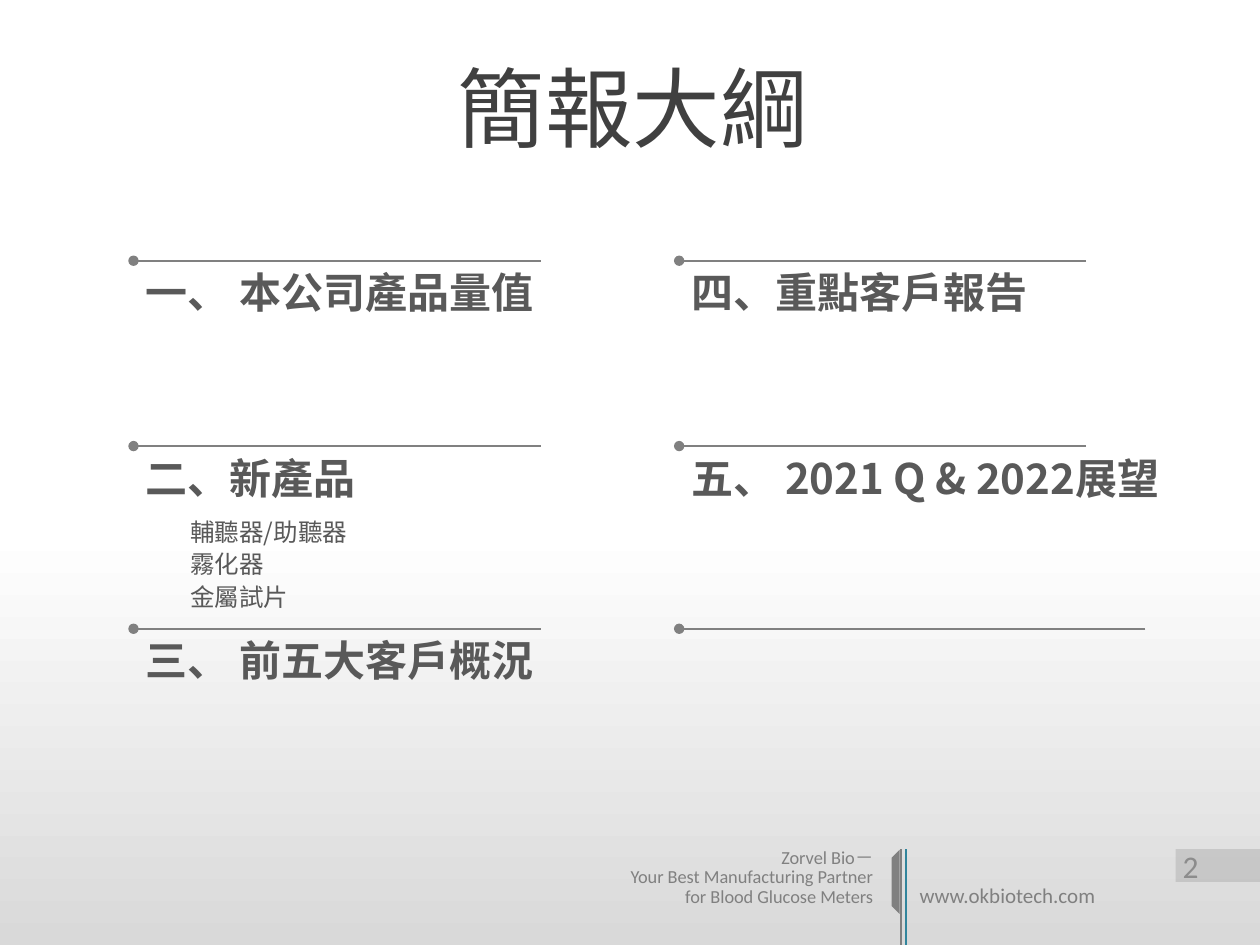
from copy import deepcopy

from lxml import etree
from pptx import Presentation
from pptx.dml.color import RGBColor
from pptx.enum import shapes, text
from pptx.oxml.ns import qn
from pptx.util import Pt

CJK, LATIN = "Noto Sans CJK SC", "Calibri"
GRAY, DARK = "808080", "595959"


def rgb(value):
    return RGBColor.from_string(value)


def write(tf, lines, size, color, font=CJK, bold=False, align=None, leading=None, gap=0):
    """Fill a text frame with one paragraph per line."""
    for i, line in enumerate(lines):
        p = tf.paragraphs[0] if i == 0 else tf.add_paragraph()
        p.alignment = align
        if leading:
            p.line_spacing = Pt(leading)
        if i and gap:
            p.space_before = Pt(gap)
        r = p.add_run()
        r.text = line
        r.font.size, r.font.bold, r.font.name = Pt(size), bold, font
        r.font.color.rgb = rgb(color)
        etree.SubElement(r.font._element, qn("a:ea"), typeface=font)


class Deck:
    def __init__(self, width, height):
        self.prs = Presentation()
        self.prs.slide_width, self.prs.slide_height = Pt(width), Pt(height)
        self.s = self.prs.slides.add_slide(self.prs.slide_layouts[6])

    def background(self, stops):
        """Paint a top-to-bottom gradient from (position, colour) pairs."""
        fill = self.s.background.fill
        fill.gradient()
        fill.gradient_angle = 270
        gs_list = self.s._element.find(".//" + qn("a:gsLst"))
        while len(gs_list) < len(stops):
            gs_list.append(deepcopy(gs_list[0]))
        for stop, (position, color) in zip(fill.gradient_stops, stops):
            stop.position = position
            stop.color.rgb = rgb(color)

    def text(self, x, y, w, h, lines, size, color, inset=True, grow=True, middle=False, **style):
        tf = self.s.shapes.add_textbox(Pt(x), Pt(y), Pt(w), Pt(h)).text_frame
        tf.word_wrap = True
        if grow:
            tf.auto_size = text.MSO_AUTO_SIZE.SHAPE_TO_FIT_TEXT
        if middle:
            tf.vertical_anchor = text.MSO_ANCHOR.MIDDLE
        if not inset:
            tf.margin_left = tf.margin_right = tf.margin_top = tf.margin_bottom = 0
        write(tf, lines, size, color, **style)

    def line(self, x1, y1, x2, y2, color=GRAY, width=1, dot=False):
        """Draw a straight line, with a dot at its end if asked."""
        c = self.s.shapes.add_connector(
            shapes.MSO_CONNECTOR.STRAIGHT, Pt(x1), Pt(y1), Pt(x2), Pt(y2))
        c.line.color.rgb = rgb(color)
        c.line.width = Pt(width)
        if dot:
            etree.SubElement(c.line._get_or_add_ln(), qn("a:tailEnd"), type="oval")
        etree.SubElement(c._element.spPr, qn("a:effectLst"))

    def shape(self, kind, x, y, w, h, color, alpha=None):
        sp = self.s.shapes.add_shape(kind, Pt(x), Pt(y), Pt(w), Pt(h))
        sp.shadow.inherit = False
        sp.fill.solid()
        sp.fill.fore_color.rgb = rgb(color)
        sp.line.fill.background()
        if alpha:
            clr = sp._element.spPr.find(".//" + qn("a:srgbClr"))
            etree.SubElement(clr, qn("a:alpha"), val=str(alpha * 1000))
        return sp


def footer(deck):
    deck.line(514.8, 485.3, 514.8, 540, width=1.5)
    stripe = deck.shape(shapes.MSO_SHAPE.DIAGONAL_STRIPE, 501.1, 491, 25.9, 25.9, GRAY)
    stripe.adjustments[0] = 0.75
    stripe.rotation = 225
    stripe._element.spPr.xfrm.set("flipH", "1")
    deck.line(517.7, 485.3, 517.7, 540, "31859C", 1.5)
    deck.text(342.7, 481.7, 163.4, 40.3,
              ["Zorvel Bio－", "Your Best Manufacturing Partner", "for Blood Glucose Meters"],
              10.5, GRAY, font=LATIN, align=text.PP_ALIGN.RIGHT, leading=11)
    deck.text(518.4, 504, 136.1, 18.7, ["www.okbiotech.com"], 12, GRAY, font=LATIN, leading=11)

    tf = deck.shape(shapes.MSO_SHAPE.RECTANGLE, 671.8, 485.3, 48.2, 18.7, GRAY, 25).text_frame
    tf.margin_left = Pt(4)
    tf.margin_right = tf.margin_top = tf.margin_bottom = 0
    tf.vertical_anchor = text.MSO_ANCHOR.MIDDLE
    write(tf, ["2"], 18, "8C8C8C", font=LATIN, align=text.PP_ALIGN.LEFT)


def outline(deck):
    columns, rows = (76.3, 388.1), (149, 254.9, 359.3)
    # Each entry: heading, heading width, rule width
    entries = (
        (("一、 本公司產品量值", 249.1, 232.6),
         ("二、新產品", 221, 232.6),
         ("三、 前五大客戶概況", 249.1, 232.6)),
        (("四、重點客戶報告", 221, 232.6),
         ("五、 2021 Q & 2022展望", 283, 232.6),
         (None, 0, 266.4)),
    )
    for x, column in zip(columns, entries):
        for y, (heading, width, rule) in zip(rows, column):
            if heading:
                deck.text(x, y, width, 36, [heading], 24, DARK, bold=True)
            deck.line(x + rule, y, x, y, dot=True)
    deck.text(108.7, 295.2, 193, 54.7, ["輔聽器/助聽器", "霧化器", "金屬試片"], 14, DARK,
              inset=False, grow=False, gap=2)


def main():
    deck = Deck(720, 540)
    deck.background([(0, "FFFFFF"), (0.56, "FFFFFF"), (1, "D9D9D9")])
    footer(deck)
    deck.text(45.4, 15.8, 632.2, 90, ["簡報大綱"], 50, "404040",
              grow=False, middle=True, align=text.PP_ALIGN.CENTER)
    outline(deck)
    deck.prs.save("out.pptx")


if __name__ == "__main__":
    main()
